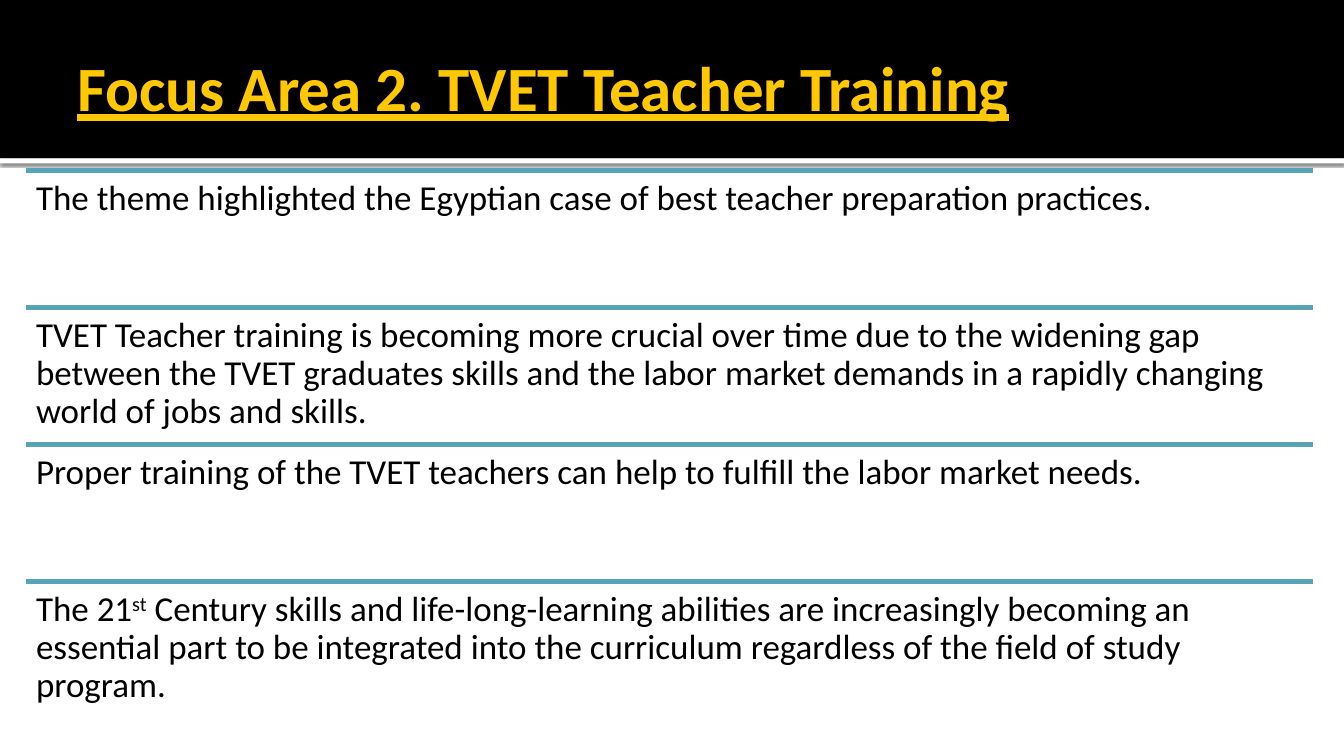
from lxml import etree
from pptx import Presentation
from pptx.dml.color import RGBColor
from pptx.enum.shapes import MSO_CONNECTOR, MSO_SHAPE
from pptx.enum.text import MSO_ANCHOR
from pptx.oxml import parse_xml
from pptx.oxml.ns import qn
from pptx.util import Inches, Pt

RECT = MSO_SHAPE.RECTANGLE
STRAIGHT = MSO_CONNECTOR.STRAIGHT
TOP, MIDDLE = MSO_ANCHOR.TOP, MSO_ANCHOR.MIDDLE

THEME = {
    "band": RGBColor(0, 0, 0),
    "strip": RGBColor(255, 255, 255),
    "rule": RGBColor(0x57, 0xA4, 0xB9),
    "title": {"name": "Calibri", "size": Pt(45), "bold": True, "underline": True},
    "title_color": RGBColor(0xFF, 0xC8, 0x00),
    "body": {"name": "Calibri", "size": Pt(25)},
    "body_color": RGBColor(0, 0, 0),
    "rule_width": Pt(3.78),
}

# Each row is a list of (text, superscript) runs
ROWS = [
    [("The theme highlighted the Egyptian case of best teacher preparation practices.", False)],
    [("TVET Teacher training is becoming more crucial over time due to the widening gap "
      "between the TVET graduates skills and the labor market demands in a rapidly "
      "changing world of jobs and skills.", False)],
    [("Proper training of the TVET teachers can help to fulfill the labor market needs.", False)],
    [("The 21", False), ("st", True),
     (" Century skills and life-long-learning abilities are increasingly becoming an "
      "essential part to be integrated into the curriculum regardless of the field of "
      "study program.", False)],
]

prs = Presentation()
prs.slide_width, prs.slide_height = Inches(13.33), Inches(7.5)
s = prs.slides.add_slide(prs.slide_layouts[6])


def add_bar(top, height, color):
    sp = s.shapes.add_shape(RECT, 0, Inches(top), prs.slide_width, Inches(height))
    sp.fill.solid()
    sp.fill.fore_color.rgb = color
    sp.line.fill.background()
    sp.shadow.inherit = False
    return sp


def add_text(box, insets, anchor, runs, style, color):
    tf = s.shapes.add_textbox(*map(Inches, box)).text_frame
    tf.word_wrap = True
    tf.vertical_anchor = anchor
    for side, inset in zip(("left", "top", "right", "bottom"), insets):
        setattr(tf, f"margin_{side}", Inches(inset))
    p = tf.paragraphs[0]
    for text, raised in runs:
        r = p.add_run()
        r.text = text
        for key, value in style.items():
            setattr(r.font, key, value)
        r.font.color.rgb = color
        if raised:
            r._r.get_or_add_rPr().set("baseline", "30000")
    return p


# Header: white strip with a soft shadow, then the black band
strip = add_bar(1.57, 0.05, THEME["strip"])
strip._element.spPr.find(qn("a:effectLst")).append(parse_xml(
    '<a:outerShdw xmlns:a="http://schemas.openxmlformats.org/drawingml/2006/main" '
    f'blurRad="{Pt(2.5)}" dist="{Pt(0.8)}" dir="5400000" algn="tl" rotWithShape="0">'
    '<a:srgbClr val="000000"><a:alpha val="60000"/></a:srgbClr></a:outerShdw>'))
add_bar(0, 1.57, THEME["band"])

# Title
add_text((0.67, 0.17, 12, 1.37), (0.1, 0.05, 0.05, 0.05), MIDDLE,
         [("Focus Area 2. TVET Teacher Training", False)],
         THEME["title"], THEME["title_color"])

# Rows: a rule with its statement below
LEFT, FIRST, WIDTH, PITCH = 0.26, 1.69, 12.76, 1.36
for i, runs in enumerate(ROWS):
    y = FIRST + i * PITCH
    rule = s.shapes.add_connector(STRAIGHT, Inches(LEFT), Inches(y),
                                  Inches(LEFT + WIDTH), Inches(y))
    rule.line.color.rgb = THEME["rule"]
    rule.line.width = THEME["rule_width"]
    etree.SubElement(rule._element.spPr, qn("a:effectLst"))
    p = add_text((LEFT, y, WIDTH, PITCH), (0.1,) * 4, TOP, runs,
                 THEME["body"], THEME["body_color"])
    p.line_spacing = 0.9

prs.save("out.pptx")
